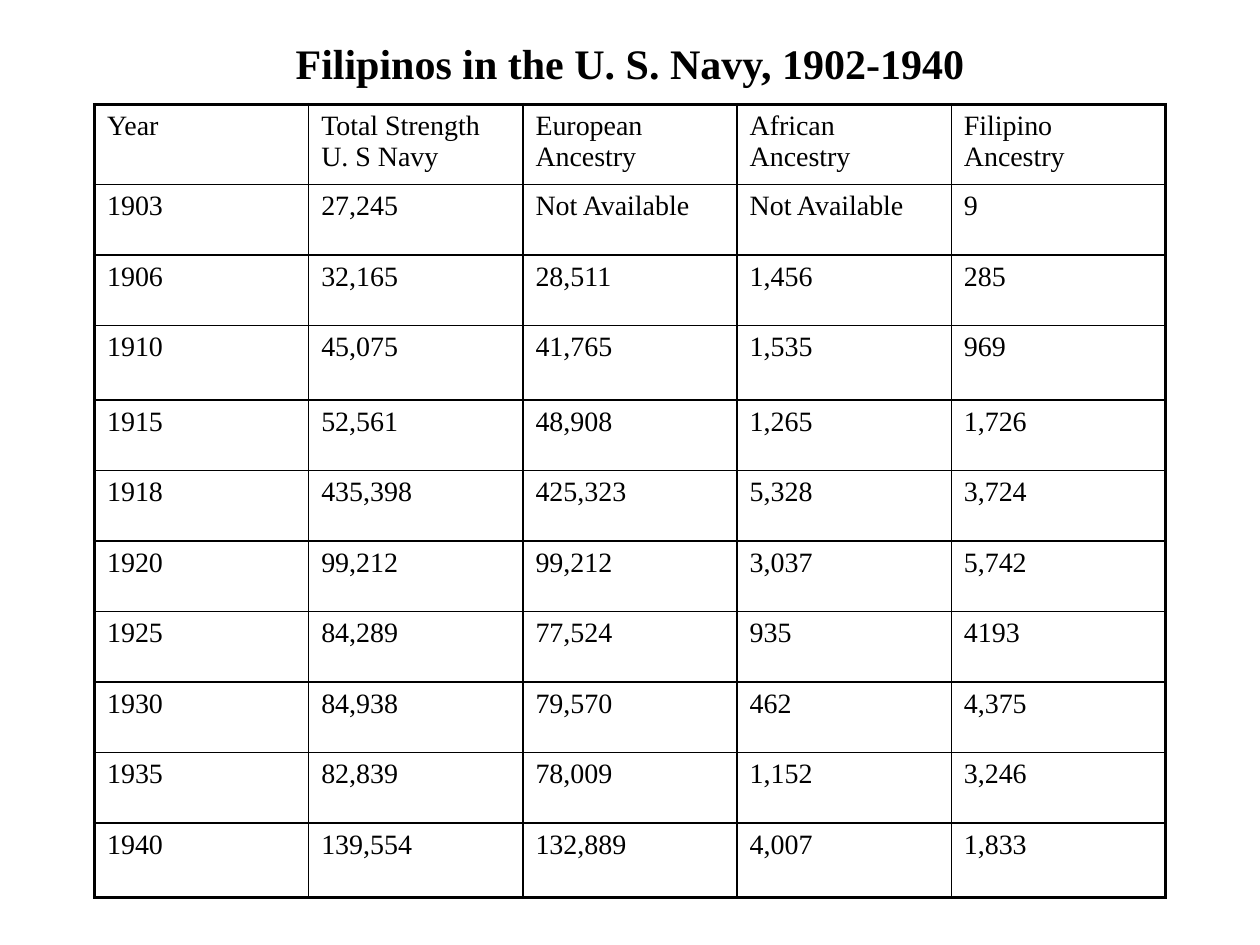
"""Build a slide with a table of Filipinos in the U. S. Navy, 1902-1940."""
from lxml import etree
from pptx import Presentation
from pptx.dml.color import RGBColor
from pptx.enum.text import MSO_ANCHOR, PP_ALIGN
from pptx.oxml.ns import qn
from pptx.util import Inches, Pt

CENTER = PP_ALIGN.CENTER
MIDDLE = MSO_ANCHOR.MIDDLE
COLORS = {"ink": "000000"}
FONT = "Times New Roman"
THIN, THICK = Pt(1), Pt(2.25)
LEFT, WIDTH = Inches(0.75), Inches(8.5)
TALL, SHORT = Inches(0.59), Inches(0.56)
TALL_ROWS = (0, 3, 10)

ROWS = [
    ("Year", "Total Strength\vU. S Navy", "European Ancestry", "African Ancestry", "Filipino Ancestry"),
    ("1903", "27,245", "Not Available", "Not Available", "9"),
    ("1906", "32,165", "28,511", "1,456", "285"),
    ("1910", "45,075", "41,765", "1,535", "969"),
    ("1915", "52,561", "48,908", "1,265", "1,726"),
    ("1918", "435,398", "425,323", "5,328", "3,724"),
    ("1920", "99,212", "99,212", "3,037", "5,742"),
    ("1925", "84,289", "77,524", "935", "4193"),
    ("1930", "84,938", "79,570", "462", "4,375"),
    ("1935", "82,839", "78,009", "1,152", "3,246"),
    ("1940", "139,554", "132,889", "4,007", "1,833"),
]
ROW_COUNT, COLUMN_COUNT = len(ROWS), len(ROWS[0])


def format_runs(paragraph, size, bold):
    for run in paragraph.runs:
        run.font.name = FONT
        run.font.size = Pt(size)
        run.font.bold = bold
        run.font.color.rgb = RGBColor.from_string(COLORS["ink"])


def add_borders(cell, widths):
    properties = cell._tc.get_or_add_tcPr()
    for index, (side, width) in enumerate(widths.items()):
        line = etree.Element(qn(f"a:ln{side}"), w=str(width))
        fill = etree.SubElement(line, qn("a:solidFill"))
        etree.SubElement(fill, qn("a:srgbClr"), val=COLORS["ink"])
        properties.insert(index, line)


presentation = Presentation()
presentation.slide_width = Inches(10)
presentation.slide_height = Inches(7.5)
slide = presentation.slides.add_slide(presentation.slide_layouts[6])

title = slide.shapes.add_textbox(LEFT, Inches(0.25), WIDTH, Inches(0.5))
title.text_frame.word_wrap = True
title.text_frame.vertical_anchor = MIDDLE
title.text_frame.text = "Filipinos in the U. S. Navy, 1902-1940"
title.text_frame.paragraphs[0].alignment = CENTER
format_runs(title.text_frame.paragraphs[0], 24, True)

row_heights = [TALL if row in TALL_ROWS else SHORT for row in range(ROW_COUNT)]
table = slide.shapes.add_table(
    ROW_COUNT, COLUMN_COUNT, LEFT, Inches(0.83), WIDTH, sum(row_heights)
).table
table.first_row = False
table.horz_banding = False

for row, values in enumerate(ROWS):
    table.rows[row].height = row_heights[row]
    for column, value in enumerate(values):
        cell = table.cell(row, column)
        cell.text_frame.text = value
        format_runs(cell.text_frame.paragraphs[0], 16, False)
        cell.fill.background()
        add_borders(cell, {
            "L": THICK if column == 0 else THIN,
            "R": THICK if column == COLUMN_COUNT - 1 else THIN,
            "T": THICK if row == 0 else THIN,
            "B": THICK if row == ROW_COUNT - 1 else THIN,
        })

presentation.save("out.pptx")
